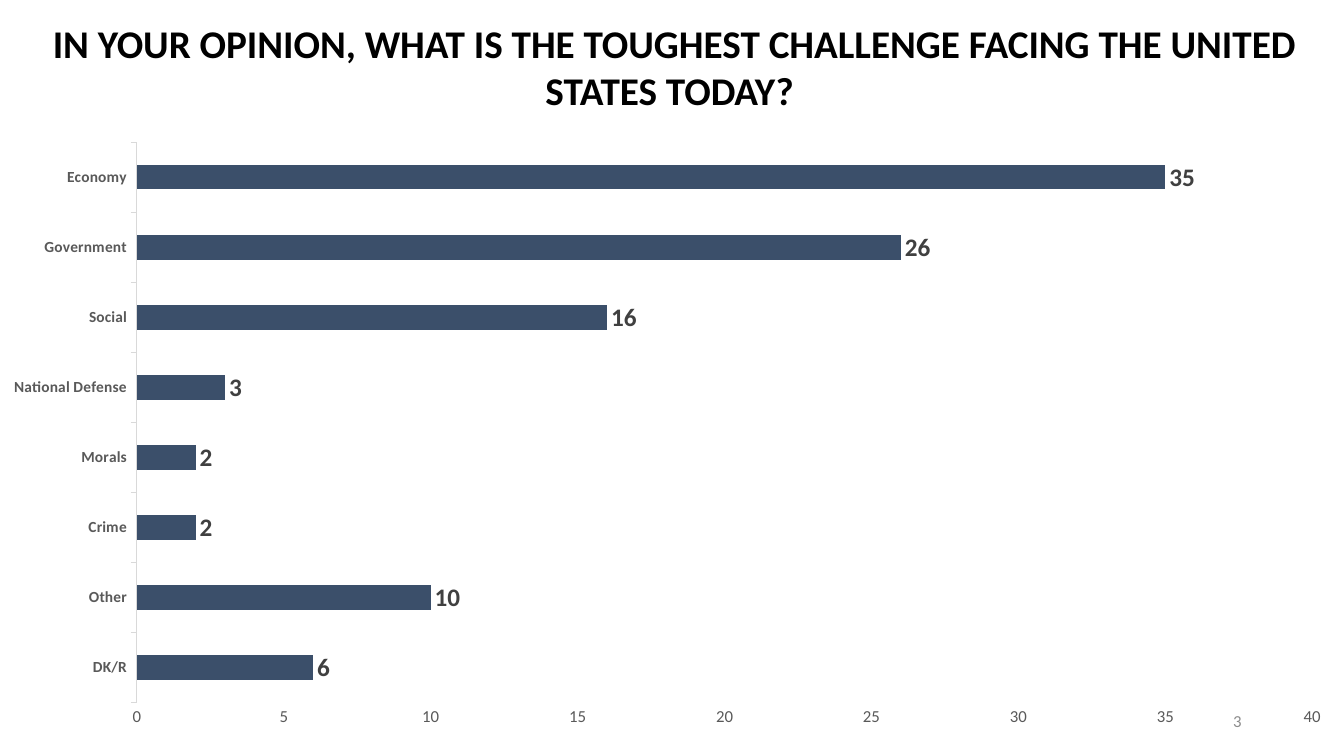
import pptx
import pptx.chart.data
import pptx.dml.color
import pptx.enum.chart
import pptx.enum.text
import pptx.oxml
import pptx.oxml.ns
import pptx.util

Pt = pptx.util.Pt
ALIGN = pptx.enum.text.PP_ALIGN
ANCHOR = pptx.enum.text.MSO_ANCHOR
TICK = pptx.enum.chart.XL_TICK_MARK


def style_font(font, size, color, bold=False):
    font.name = "Calibri"
    font.size = Pt(size)
    font.bold = bold
    font.color.rgb = pptx.dml.color.RGBColor.from_string(color)


def add_text(page, text, left, top, width, height, size, color,
             bold=False, align=ALIGN.LEFT, anchor=ANCHOR.TOP):
    box = page.shapes.add_textbox(Pt(left), Pt(top), Pt(width), Pt(height))
    frame = box.text_frame
    frame.word_wrap = True
    frame.vertical_anchor = anchor
    para = frame.paragraphs[0]
    para.alignment = align
    span = para.add_run()
    span.text = text
    style_font(span.font, size, color, bold)


deck = pptx.Presentation()
deck.slide_width = Pt(960)
deck.slide_height = Pt(540)
page = deck.slides.add_slide(deck.slide_layouts[6])

add_text(page, "IN YOUR OPINION, WHAT IS THE TOUGHEST CHALLENGE FACING THE UNITED STATES TODAY? ",
         3, 10, 957, 75, size=28, color="000000", bold=True, align=ALIGN.CENTER)
add_text(page, "3", 678, 500.5, 216, 28.75, size=12, color="8C8C8C",
         align=ALIGN.RIGHT, anchor=ANCHOR.MIDDLE)

answers = {
    "DK/R": 6,
    "Other": 10,
    "Crime": 2,
    "Morals": 2,
    "National Defense": 3,
    "Social": 16,
    "Government": 26,
    "Economy": 35,
}
data = pptx.chart.data.CategoryChartData()
data.categories = list(answers)
data.add_series("Series 1", list(answers.values()))
chart = page.shapes.add_chart(
    pptx.enum.chart.XL_CHART_TYPE.BAR_CLUSTERED,
    Pt(0), Pt(93.6), Pt(949.7), Pt(440), data).chart
chart.has_legend = False
chart.has_title = False
style_font(chart.font, 10, "000000")

challenges = chart.category_axis
challenges.major_tick_mark = TICK.OUTSIDE
challenges.has_major_gridlines = False
challenges.format.line.width = Pt(0.75)
challenges.format.line.color.rgb = pptx.dml.color.RGBColor.from_string("D9D9D9")
style_font(challenges.tick_labels.font, 11, "595959", bold=True)

percents = chart.value_axis
percents.minimum_scale = 0
percents.maximum_scale = 40
percents.major_unit = 5
percents.major_tick_mark = TICK.NONE
percents.has_major_gridlines = False
percents.format.line.fill.background()
style_font(percents.tick_labels.font, 12, "595959")

plot = chart.plots[0]
plot.gap_width = 182
plot.vary_by_categories = False
bars = plot.series[0]
bars.format.fill.solid()
bars.format.fill.fore_color.rgb = pptx.dml.color.RGBColor.from_string("3B4F6A")
labels = bars.data_labels
labels.show_value = True
labels.position = pptx.enum.chart.XL_LABEL_POSITION.OUTSIDE_END
style_font(labels.font, 18, "404040", bold=True)

area = chart.element.chart.plotArea
for old in area.findall(pptx.oxml.ns.qn("c:layout")):
    area.remove(old)
area.insert(0, pptx.oxml.parse_xml(
    f'<c:layout {pptx.oxml.ns.nsdecls("c")}><c:manualLayout>'
    '<c:layoutTarget val="inner"/><c:xMode val="edge"/><c:yMode val="edge"/>'
    '<c:x val="0.103"/><c:y val="0.018"/><c:w val="0.884"/><c:h val="0.91"/>'
    '</c:manualLayout></c:layout>'))

deck.save("out.pptx")
